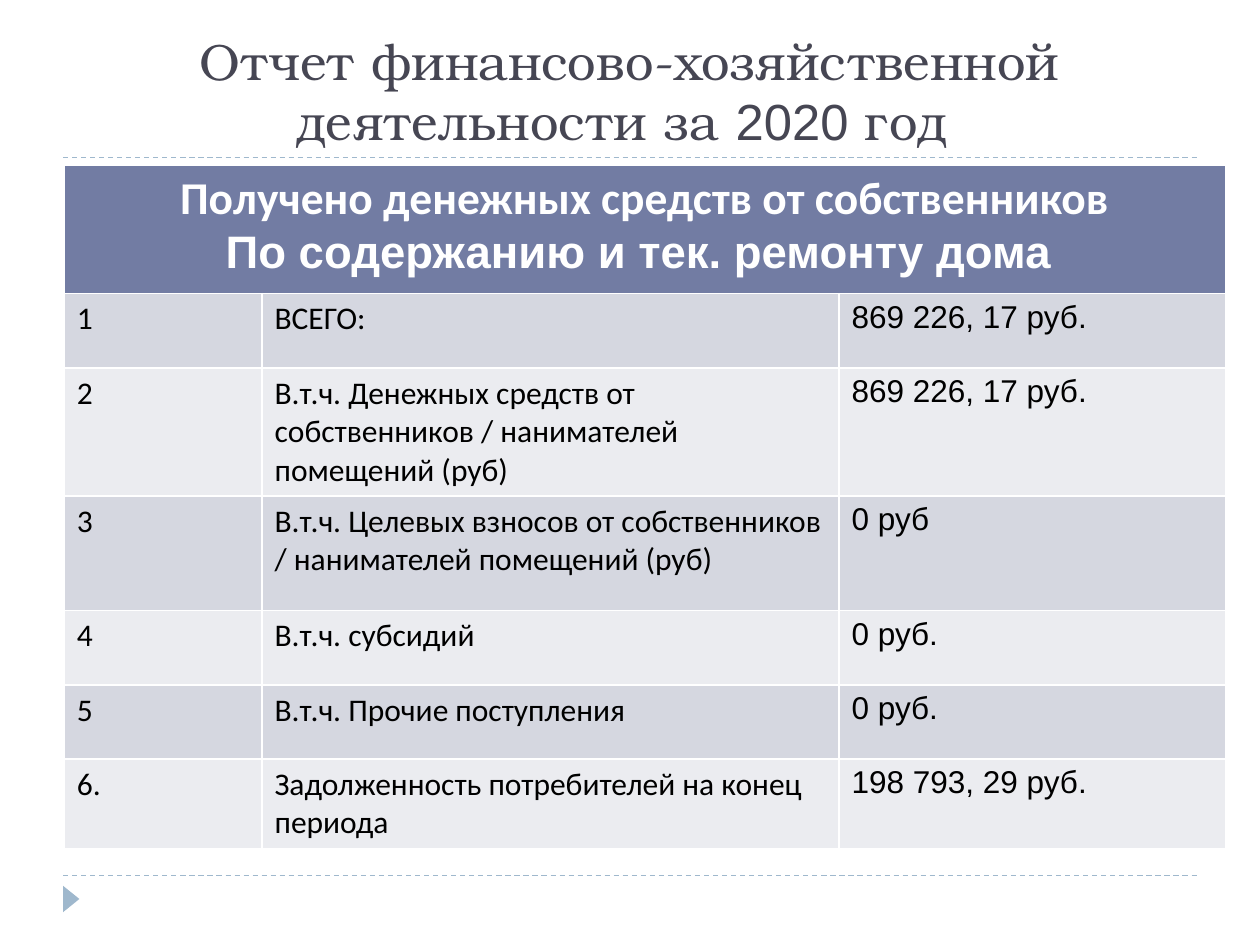
"""Build a slide reporting funds received from apartment owners in 2020."""
from lxml import etree
from pptx import Presentation
from pptx.dml.color import RGBColor
from pptx.enum.dml import MSO_LINE
from pptx.enum.shapes import MSO_CONNECTOR, MSO_SHAPE
from pptx.enum.text import MSO_ANCHOR, MSO_AUTO_SIZE, PP_ALIGN
from pptx.oxml.ns import qn
from pptx.util import Inches, Pt

CENTER = PP_ALIGN.CENTER
BOTTOM = MSO_ANCHOR.BOTTOM
NO_FIT = MSO_AUTO_SIZE.NONE
DASH = MSO_LINE.DASH
STRAIGHT = MSO_CONNECTOR.STRAIGHT
TRIANGLE = MSO_SHAPE.ISOSCELES_TRIANGLE

COLORS = {
    "title": "464653",
    "accent": "9FB8CD",
    "header": "727CA3",
    "odd": "D5D7E0",
    "even": "EBECF0",
    "white": "FFFFFF",
    "black": "000000",
}
COLUMN_WIDTHS = [1.57, 4.58, 3.07]
ROW_HEIGHTS = [1.02, 0.59, 0.91, 0.91, 0.59, 0.59, 0.64]
COLUMN_FONTS = ["Calibri", "Calibri", "Arial"]
TITLE_SPANS = [
    ("Отчет финансово-хозяйственной деятельности за ", "TeX Gyre Bonum"),
    ("2020", "Arial"),
    (" год ", "TeX Gyre Bonum"),
]
HEADER_LINES = [
    ("Получено денежных средств от собственников", "Calibri"),
    ("По содержанию и тек. ремонту дома ", "Arial"),
]
ROWS = [
    ("1", "ВСЕГО:", "869 226, 17 руб."),
    ("2", "В.т.ч. Денежных средств от собственников / нанимателей помещений (руб)",
     "869 226, 17 руб."),
    ("3", "В.т.ч. Целевых взносов от собственников / нанимателей помещений (руб)",
     "0 руб"),
    ("4", "В.т.ч. субсидий", "0 руб."),
    ("5", "В.т.ч. Прочие поступления", "0 руб."),
    ("6.", "Задолженность потребителей на конец периода", "198 793, 29 руб."),
]


def add_span(para, text, color, **font_values):
    span = para.add_run()
    span.text = text
    for name, value in font_values.items():
        setattr(span.font, name, value)
    span.font.color.rgb = RGBColor.from_string(COLORS[color])


def fill_solid(item, color):
    item.fill.solid()
    item.fill.fore_color.rgb = RGBColor.from_string(COLORS[color])


deck = Presentation()
deck.slide_width, deck.slide_height = Inches(10), Inches(7.5)
page = deck.slides.add_slide(deck.slide_layouts[5])

for y in (6.95, 1.25):
    rule = page.shapes.add_connector(
        STRAIGHT, Inches(0.5), Inches(y), Inches(9.5), Inches(y))
    rule.line.color.rgb = RGBColor.from_string(COLORS["accent"])
    rule.line.width = Pt(0.75)
    rule.line.dash_style = DASH
    etree.SubElement(rule._element.spPr, qn("a:effectLst"))

marker = page.shapes.add_shape(
    TRIANGLE, Inches(0.46), Inches(7.07), Inches(0.21), Inches(0.13))
marker.rotation = 90
marker.shadow.inherit = False
fill_solid(marker, "accent")
marker.line.fill.background()

title = page.shapes.title
title.left, title.top = Inches(0.5), Inches(0.25)
title.width, title.height = Inches(9), Inches(1)
frame_format = {"word_wrap": True, "auto_size": NO_FIT, "vertical_anchor": BOTTOM}
for name, value in frame_format.items():
    setattr(title.text_frame, name, value)
title_para = title.text_frame.paragraphs[0]
title_para.alignment = CENTER
for text, font in TITLE_SPANS:
    add_span(title_para, text, "title", name=font, size=Pt(29))

table = page.shapes.add_table(
    len(ROW_HEIGHTS), len(COLUMN_WIDTHS), Inches(0.51), Inches(1.31),
    Inches(sum(COLUMN_WIDTHS)), Inches(sum(ROW_HEIGHTS))).table
for column, width in zip(table.columns, COLUMN_WIDTHS):
    column.width = Inches(width)
for row, height in zip(table.rows, ROW_HEIGHTS):
    row.height = Inches(height)

header = table.cell(0, 0)
header.merge(table.cell(0, 2))
fill_solid(header, "header")
header.text_frame.add_paragraph()
for para, (text, font) in zip(header.text_frame.paragraphs, HEADER_LINES):
    para.alignment = CENTER
    add_span(para, text, "white", name=font, size=Pt(26), bold=True)

for row_number, values in enumerate(ROWS, start=1):
    for column_number, (text, font) in enumerate(zip(values, COLUMN_FONTS)):
        cell = table.cell(row_number, column_number)
        fill_solid(cell, "odd" if row_number % 2 else "even")
        add_span(cell.text_frame.paragraphs[0], text, "black",
                 name=font, size=Pt(18), bold=False)

deck.save("out.pptx")
